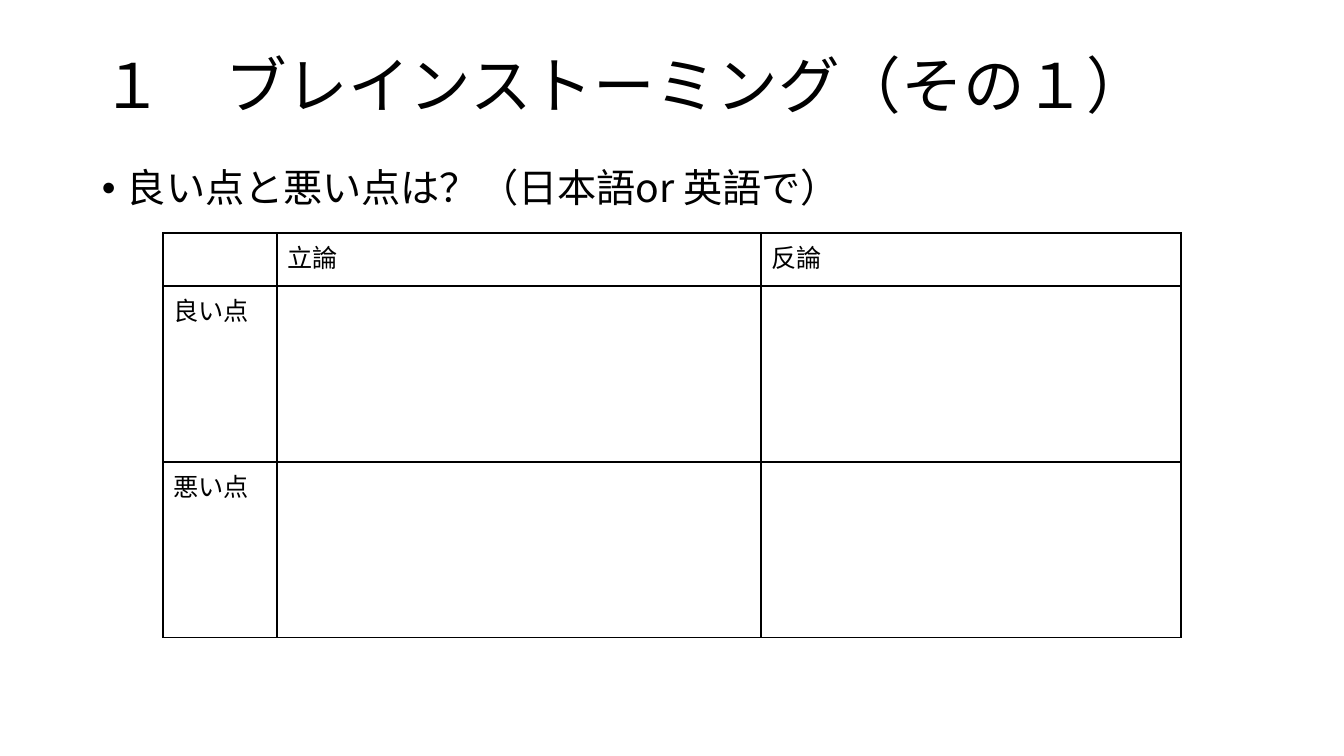
from lxml import etree
from pptx import Presentation
from pptx.dml.color import RGBColor
from pptx.enum.text import MSO_ANCHOR
from pptx.oxml.ns import qn
from pptx.util import Pt

MIDDLE = MSO_ANCHOR.MIDDLE
TOP = MSO_ANCHOR.TOP
SCALE = 914400 / 100.8
THEME = {
    "font": "Noto Sans CJK JP",
    "ink": "000000",
    "title": 44,
    "body": 28,
    "cell": 18,
    "border": 1,
}


def emu(*lengths):
    return [round(length * SCALE) for length in lengths]


def write(frame, text, size, anchor=TOP, line=None, before=None, bullet=None):
    frame.word_wrap = True
    frame.vertical_anchor = anchor
    para = frame.paragraphs[0]
    para.line_spacing = line
    para.space_before = before
    if bullet:
        settings = para._p.get_or_add_pPr()
        indent = emu(25)[0]
        settings.set("marL", str(indent))
        settings.set("indent", str(-indent))
        etree.SubElement(settings, qn("a:buFont"), typeface="Arial")
        etree.SubElement(settings, qn("a:buChar"), char=bullet)
    span = para.add_run()
    span.text = text
    span.font.size = Pt(size)
    span.font.name = THEME["font"]
    span.font.color.rgb = RGBColor.from_string(THEME["ink"])
    etree.SubElement(span._r.get_or_add_rPr(), qn("a:ea"), typeface=THEME["font"])


deck = Presentation()
deck.slide_width, deck.slide_height = emu(1344, 756)
page = deck.slides.add_slide(deck.slide_layouts[6])

title_box = page.shapes.add_textbox(*emu(92, 40, 1159, 98))
write(title_box.text_frame, "１　ブレインストーミング（その１）", THEME["title"],
      anchor=MIDDLE, line=0.9)

question_box = page.shapes.add_textbox(*emu(92, 164, 1180, 525))
write(question_box.text_frame, "良い点と悪い点は？（日本語or 英語で）", THEME["body"],
      line=0.9, before=Pt(10), bullet="•")

column_widths = [114, 484, 420]
row_heights = [53, 176, 176]
cell_texts = [
    ["", "立論", "反論"],
    ["良い点", "", ""],
    ["悪い点", "", ""],
]
table = page.shapes.add_table(
    len(row_heights), len(column_widths),
    *emu(163, 233, sum(column_widths), sum(row_heights)),
).table
table.first_row = False
table.horz_banding = False
for column, width in zip(table.columns, emu(*column_widths)):
    column.width = width
for row, height, texts in zip(table.rows, emu(*row_heights), cell_texts):
    row.height = height
    for cell, text in zip(row.cells, texts):
        settings = cell._tc.get_or_add_tcPr()
        for side in ("lnL", "lnR", "lnT", "lnB"):
            border = etree.SubElement(settings, qn(f"a:{side}"), w=str(Pt(THEME["border"])))
            fill = etree.SubElement(border, qn("a:solidFill"))
            etree.SubElement(fill, qn("a:srgbClr"), val=THEME["ink"])
        cell.fill.background()
        if text:
            write(cell.text_frame, text, THEME["cell"])

deck.save("out.pptx")
